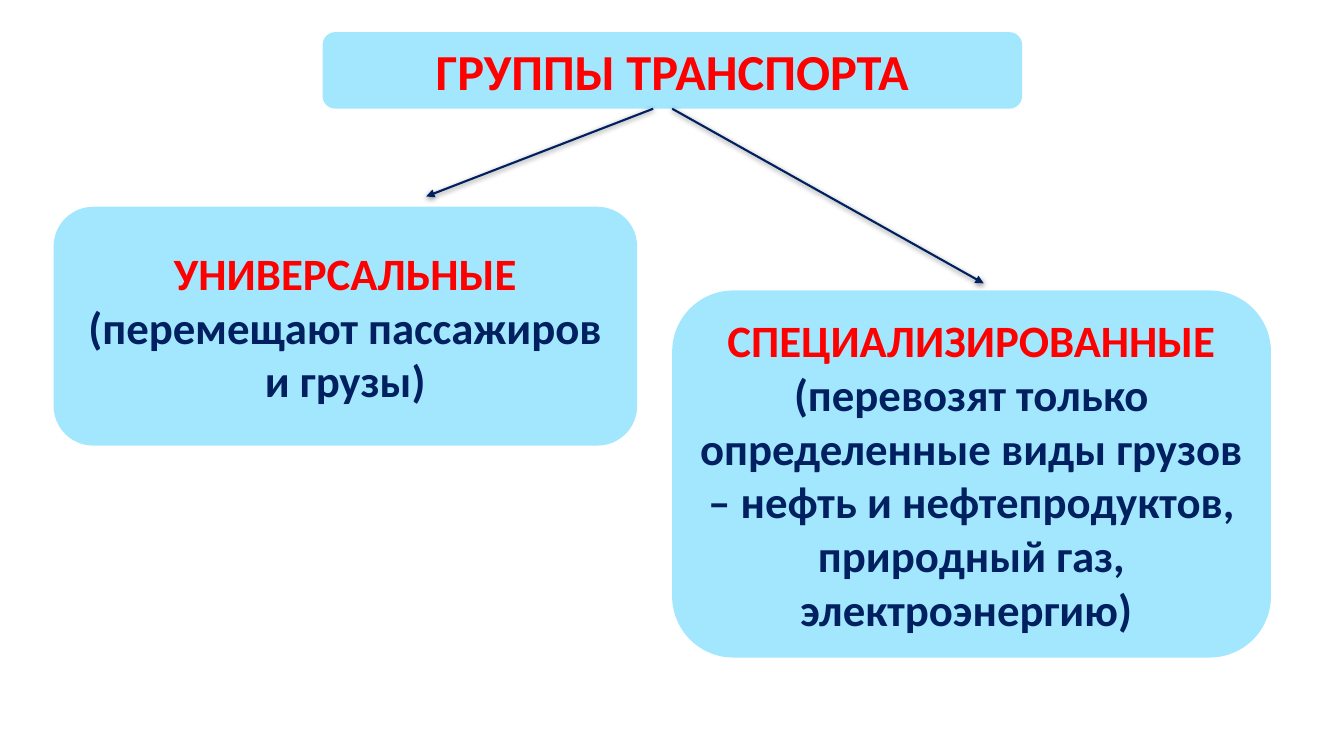
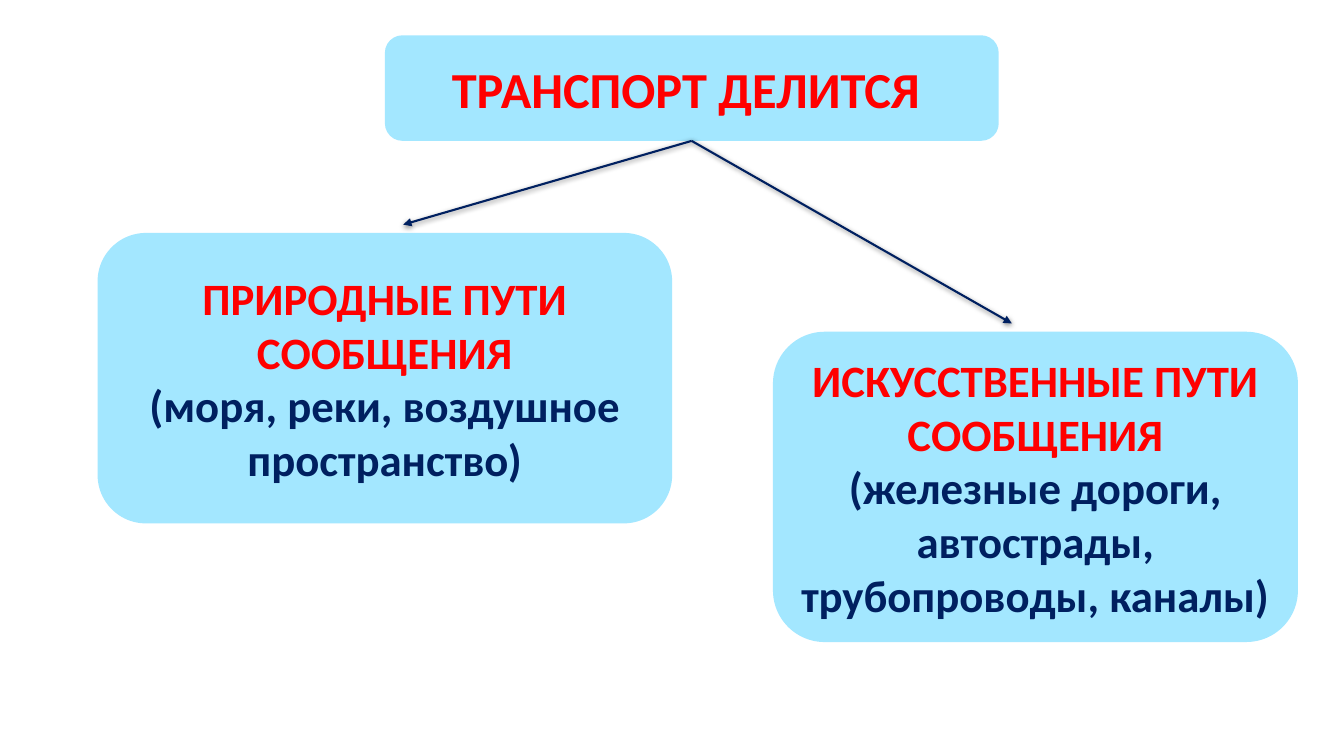
"""Build two slides showing how transport is classified."""
from lxml import etree
from pptx import Presentation
from pptx.dml.color import RGBColor
from pptx.enum.shapes import MSO_CONNECTOR, MSO_SHAPE
from pptx.enum.text import MSO_ANCHOR, PP_ALIGN
from pptx.oxml import parse_xml
from pptx.oxml.ns import nsdecls, qn
from pptx.util import Cm, Pt

ROUNDED = MSO_SHAPE.ROUNDED_RECTANGLE
STRAIGHT = MSO_CONNECTOR.STRAIGHT
MIDDLE = MSO_ANCHOR.MIDDLE
CENTER = PP_ALIGN.CENTER
COLORS = {"panel": "A3E7FF", "heading": "FF0000", "detail": "002060", "shadow": "000000"}
FONT = "Calibri"
TITLE_SIZE, BODY_SIZE = 36, 32
SHADOW = (
    f'<a:effectLst {nsdecls("a")}>'
    '<a:outerShdw blurRad="50800" dist="12700" dir="5400000" rotWithShape="0">'
    f'<a:srgbClr val="{COLORS["shadow"]}"><a:alpha val="50000"/></a:srgbClr>'
    "</a:outerShdw></a:effectLst>"
)

SLIDES = [
    {
        "title": ("ГРУППЫ ТРАНСПОРТА", (8.13, 0.81, 17.63, 1.93)),
        "groups": [
            ((1.35, 5.21, 14.71, 6.02),
             [[("УНИВЕРСАЛЬНЫЕ", "heading")],
              [("(перемещают пассажиров и грузы)", "detail")]]),
            ((16.94, 7.32, 15.09, 9.25),
             [[("СПЕЦИАЛИЗИРОВАННЫЕ", "heading")],
              [("(перевозят только определенные виды грузов – нефть и "
                "нефтепродуктов, природный газ, электроэнергию) ", "detail")]]),
        ],
        "arrows": [(16.46, 10.74, 4.95), (16.94, 24.79, 7.14)],
    },
    {
        "title": ("ТРАНСПОРТ ДЕЛИТСЯ ", (9.7, 0.89, 15.47, 2.66)),
        "groups": [
            ((2.46, 5.87, 14.48, 7.32),
             [[("ПРИРОДНЫЕ ПУТИ СООБЩЕНИЯ", "heading")],
              [("(моря, реки, воздушное пространство)", "detail")]]),
            ((19.48, 8.36, 13.23, 7.82),
             [[("ИСКУССТВЕННЫЕ ПУТИ СООБЩЕНИЯ ", "heading"),
               ("(железные дороги, автострады, трубопроводы, каналы)", "detail")]]),
        ],
        "arrows": [(17.43, 10.16, 5.66), (17.43, 25.5, 8.15)],
    },
]


def add_panel(page, place, paragraphs, size):
    box = page.shapes.add_shape(ROUNDED, *map(Cm, place))
    box.shadow.inherit = False
    box.fill.solid()
    box.fill.fore_color.rgb = RGBColor.from_string(COLORS["panel"])
    box.line.fill.background()
    frame = box.text_frame
    frame.word_wrap = True
    frame.vertical_anchor = MIDDLE
    for index, runs in enumerate(paragraphs):
        para = frame.add_paragraph() if index else frame.paragraphs[0]
        para.alignment = CENTER
        for text, color in runs:
            span = para.add_run()
            span.text = text
            span.font.name = FONT
            span.font.size = Pt(size)
            span.font.bold = True
            span.font.color.rgb = RGBColor.from_string(COLORS[color])


def add_arrow(page, start, end):
    arrow = page.shapes.add_connector(STRAIGHT, *map(Cm, start + end))
    arrow.line.width = Pt(1.5)
    arrow.line.color.rgb = RGBColor.from_string(COLORS["detail"])
    properties = arrow._element.spPr
    etree.SubElement(properties.find(qn("a:ln")), qn("a:tailEnd"), type="triangle")
    properties.append(parse_xml(SHADOW))


deck = Presentation()
deck.slide_width, deck.slide_height = Cm(33.87), Cm(19.05)
blank = deck.slide_layouts[6]

for content in SLIDES:
    page = deck.slides.add_slide(blank)
    title, title_place = content["title"]
    add_panel(page, title_place, [[(title, "heading")]], TITLE_SIZE)
    for place, paragraphs in content["groups"]:
        add_panel(page, place, paragraphs, BODY_SIZE)
    title_bottom = title_place[1] + title_place[3]
    for start_x, end_x, end_y in content["arrows"]:
        add_arrow(page, (start_x, title_bottom), (end_x, end_y))

deck.save("out.pptx")
